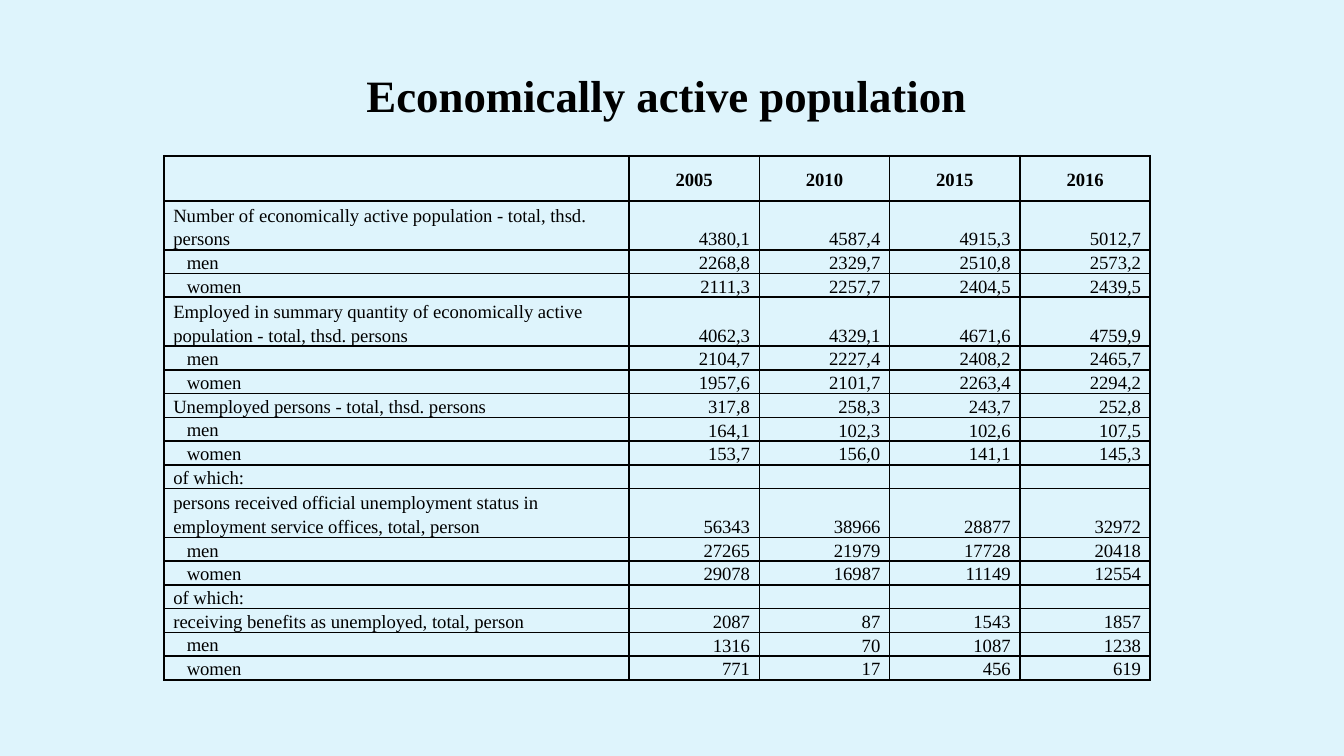
from dataclasses import dataclass

import lxml.etree
import pptx
import pptx.dml.color
import pptx.enum.text
import pptx.oxml.ns
import pptx.util

COLORS = {"background": "DEF4FC", "ink": "000000"}
FONT = "Times New Roman"
ALIGN = pptx.enum.text.PP_ALIGN
ANCHOR = pptx.enum.text.MSO_ANCHOR

SLIDE_W = pptx.util.Inches(10)
SLIDE_H = SLIDE_W * 9 // 16
LABEL_SHARE, YEAR_SHARE = 0.346, 0.097  # column widths as shares of the slide
LINE = pptx.util.Pt(12.7)  # height of one text line
HEADER_LINES, WRAPPED_LINES = 1.9, 2.07
CELL_MARGIN = pptx.util.Inches(0.07)
SUB_INDENT = pptx.util.Inches(0.1)


@dataclass
class Indicator:
    label: str
    values: tuple[str, ...] = ("", "", "", "")
    lines: float = 1
    indent: int = 0
    anchor: ANCHOR = ANCHOR.BOTTOM


def group(label: str, total: str, men: str, women: str, lines: float = 1) -> list[Indicator]:
    """A total with its split by sex."""
    return [Indicator(label, tuple(total.split()), lines)] + [
        Indicator(sex, tuple(figures.split()), 1, SUB_INDENT, ANCHOR.TOP)
        for sex, figures in (("men", men), ("women", women))
    ]


YEARS = ("2005", "2010", "2015", "2016")
OF_WHICH = Indicator("of which:", anchor=ANCHOR.TOP)
INDICATORS = [
    *group("Number of economically active population - total, thsd. persons",
           "4380,1 4587,4 4915,3 5012,7", "2268,8 2329,7 2510,8 2573,2",
           "2111,3 2257,7 2404,5 2439,5", WRAPPED_LINES),
    *group("Employed in summary quantity of economically active population - total, thsd. persons",
           "4062,3 4329,1 4671,6 4759,9", "2104,7 2227,4 2408,2 2465,7",
           "1957,6 2101,7 2263,4 2294,2", WRAPPED_LINES),
    *group("Unemployed persons - total, thsd. persons",
           "317,8 258,3 243,7 252,8", "164,1 102,3 102,6 107,5", "153,7 156,0 141,1 145,3"),
    OF_WHICH,
    *group("persons received official unemployment status in employment service offices, total, person",
           "56343 38966 28877 32972", "27265 21979 17728 20418",
           "29078 16987 11149 12554", WRAPPED_LINES),
    OF_WHICH,
    *group("receiving benefits as unemployed, total, person",
           "2087 87 1543 1857", "1316 70 1087 1238", "771 17 456 619"),
]


def apply(target: object, formats: dict[str, object]) -> None:
    for name, value in formats.items():
        setattr(target, name, value)


def write(paragraph, text: str, size: float, bold: bool, align: ALIGN) -> None:
    paragraph.alignment = align
    if not text:  # an empty cell keeps the height of its row
        end = lxml.etree.SubElement(paragraph._p, pptx.oxml.ns.qn("a:endParaRPr"))
        end.set("sz", str(int(size * 100)))
        return
    run = paragraph.add_run()
    run.text = text
    apply(run.font, {"name": FONT, "size": pptx.util.Pt(size), "bold": bold})
    run.font.color.rgb = pptx.dml.color.RGBColor.from_string(COLORS["ink"])


def outline(cell) -> None:
    properties = cell._tc.get_or_add_tcPr()
    for side in ("a:lnL", "a:lnR", "a:lnT", "a:lnB"):
        line = lxml.etree.SubElement(properties, pptx.oxml.ns.qn(side), w=str(pptx.util.Pt(1)))
        fill = lxml.etree.SubElement(line, pptx.oxml.ns.qn("a:solidFill"))
        lxml.etree.SubElement(fill, pptx.oxml.ns.qn("a:srgbClr"), val=COLORS["ink"])


def fill_cell(cell, text: str, align: ALIGN, anchor: ANCHOR, bold: bool = False, indent: int = 0) -> None:
    apply(cell, {"margin_left": CELL_MARGIN + indent, "margin_right": CELL_MARGIN,
                 "margin_top": 0, "margin_bottom": 0, "vertical_anchor": anchor})
    outline(cell)
    cell.fill.background()
    paragraph = cell.text_frame.paragraphs[0]
    paragraph.line_spacing = 1.15
    write(paragraph, text, 10, bold, align)


def add_title(slide, text: str) -> None:
    title = slide.shapes.title
    apply(title, {"left": int(SLIDE_W * 0.05), "top": int(SLIDE_H * 0.04),
                  "width": int(SLIDE_W * 0.9), "height": int(SLIDE_H * 0.17)})
    apply(title.text_frame, {"vertical_anchor": ANCHOR.MIDDLE, "word_wrap": True})
    write(title.text_frame.paragraphs[0], text, 24, True, ALIGN.CENTER)


def add_indicators(slide, indicators: list[Indicator]) -> None:
    heights = [int(LINE * lines) for lines in [HEADER_LINES] + [i.lines for i in indicators]]
    widths = [int(SLIDE_W * share) for share in [LABEL_SHARE] + [YEAR_SHARE] * len(YEARS)]
    table = slide.shapes.add_table(
        len(heights), len(widths), int(SLIDE_W * 0.122), int(SLIDE_H * 0.206),
        sum(widths), sum(heights)).table
    apply(table, {"first_row": False, "horz_banding": False})
    for column, width in zip(table.columns, widths):
        column.width = width
    for row, height in zip(table.rows, heights):
        row.height = height

    # Years
    for c, year in enumerate(("",) + YEARS):
        fill_cell(table.cell(0, c), year, ALIGN.CENTER, ANCHOR.MIDDLE, bold=True)

    # Labels and figures
    for r, item in enumerate(indicators, 1):
        fill_cell(table.cell(r, 0), item.label, ALIGN.LEFT, item.anchor, indent=item.indent)
        for c, value in enumerate(item.values, 1):
            fill_cell(table.cell(r, c), value, ALIGN.RIGHT, ANCHOR.BOTTOM)


def main() -> None:
    deck = pptx.Presentation()
    apply(deck, {"slide_width": SLIDE_W, "slide_height": SLIDE_H})
    slide = deck.slides.add_slide(deck.slide_layouts.get_by_name("Title Only"))
    slide.background.fill.solid()
    slide.background.fill.fore_color.rgb = pptx.dml.color.RGBColor.from_string(COLORS["background"])
    add_title(slide, "Economically active population ")
    add_indicators(slide, INDICATORS)
    deck.save("out.pptx")


if __name__ == "__main__":
    main()
